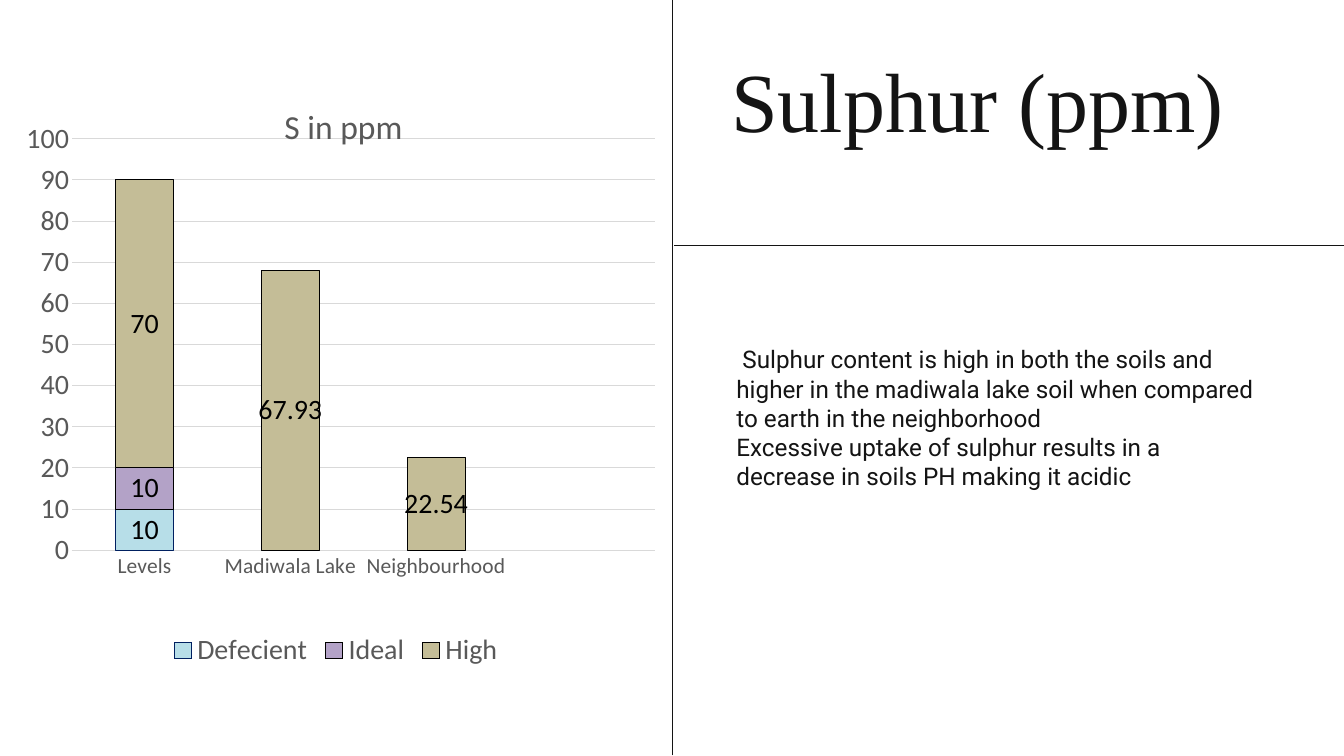
from pptx import Presentation
from pptx.chart.data import CategoryChartData
from pptx.dml.color import RGBColor
from pptx.enum import chart as ch
from pptx.enum import shapes, text
from pptx.oxml import parse_xml
from pptx.oxml.ns import nsdecls, qn
from pptx.util import Inches, Pt

INK = RGBColor(0x14, 0x14, 0x14)
BLACK = RGBColor(0, 0, 0)
GREY = RGBColor(0x59, 0x59, 0x59)
GRID = RGBColor(0xD9, 0xD9, 0xD9)
NAVY = RGBColor(0x00, 0x20, 0x60)
BLUE = RGBColor(0xB7, 0xDE, 0xE8)
PURPLE = RGBColor(0xB3, 0xA2, 0xC7)
TAN = RGBColor(0xC4, 0xBD, 0x97)

CATEGORIES = ["Levels", "Madiwala Lake", "Neighbourhood", ""]
SERIES = [
    ("Defecient", [10, None, None, None], BLUE, NAVY),
    ("Ideal", [10, None, None, None], PURPLE, BLACK),
    ("High", [70, 67.93, 22.54, None], TAN, BLACK),
]
FINDINGS = [
    " Sulphur content is high in both the soils and higher in the madiwala lake "
    "soil when compared to earth in the neighborhood",
    "Excessive uptake of sulphur results in a decrease in soils PH making it acidic",
]


def style_font(font, name, size, color):
    font.name, font.size = name, Pt(size)
    font.color.rgb = color


def style_line(line, color, width=0.75):
    line.color.rgb = color
    line.width = Pt(width)


def add_rule(page, x1, y1, x2, y2):
    rule = page.shapes.add_connector(
        shapes.MSO_CONNECTOR.STRAIGHT, Inches(x1), Inches(y1), Inches(x2), Inches(y2))
    style_line(rule.line, INK, 1.5)
    rule._element.spPr.append(parse_xml(f"<a:effectLst {nsdecls('a')}/>"))


def add_text(page, left, top, width, height, lines, font, size, inset=None, spacing=None):
    box = page.shapes.add_textbox(Inches(left), Inches(top), Inches(width), Inches(height))
    frame = box.text_frame
    frame.word_wrap = True
    frame.auto_size = text.MSO_AUTO_SIZE.SHAPE_TO_FIT_TEXT
    if inset is not None:
        frame.margin_left = frame.margin_right = Inches(inset)
        frame.margin_top = frame.margin_bottom = Inches(inset)
    frame.text = "\n".join(lines)
    for para in frame.paragraphs:
        style_font(para.font, font, size, INK)
        if spacing:
            para.line_spacing = Pt(spacing)


def set_layout(element, index, **fractions):
    """Place a chart part by fractions of the chart's size (x, y, w, h)."""
    for old in element.findall(qn("c:layout")):
        element.remove(old)
    target = '<c:layoutTarget val="inner"/>' if "w" in fractions else ""
    modes = "".join(f'<c:{key}Mode val="edge"/>' for key in fractions if key in "xy")
    values = "".join(f'<c:{key} val="{value}"/>' for key, value in fractions.items())
    element.insert(index, parse_xml(
        f"<c:layout {nsdecls('c')}><c:manualLayout>{target}{modes}{values}"
        "</c:manualLayout></c:layout>"))


def style_axes(chart):
    for axis, size in ((chart.category_axis, 23), (chart.value_axis, 30)):
        axis.major_tick_mark = axis.minor_tick_mark = ch.XL_TICK_MARK.NONE
        style_font(axis.tick_labels.font, "Calibri", size, GREY)
    style_line(chart.category_axis.format.line, GRID)
    values = chart.value_axis
    values.minimum_scale, values.maximum_scale, values.major_unit = 0, 100, 10
    values.format.line.fill.background()
    style_line(values.major_gridlines.format.line, GRID)


def add_sulphur_chart(page, left, top, width, height):
    data = CategoryChartData()
    data.categories = CATEGORIES
    for name, values, _, _ in SERIES:
        data.add_series(name, values)
    chart = page.shapes.add_chart(
        ch.XL_CHART_TYPE.COLUMN_STACKED, Inches(left), Inches(top),
        Inches(width), Inches(height), data).chart
    style_font(chart.font, "Calibri", 30, BLACK)

    chart.has_title = True
    title = chart.chart_title
    title.text_frame.text = "S in ppm"
    title.include_in_layout = False
    style_font(title.text_frame.paragraphs[0].font, "Calibri", 36, GREY)
    title.text_frame.paragraphs[0].font.bold = False
    set_layout(title._element, 1, x=0.41, y=0.045)

    chart.has_legend = True
    chart.legend.position = ch.XL_LEGEND_POSITION.BOTTOM
    chart.legend.include_in_layout = False
    style_font(chart.legend.font, "Calibri", 30, GREY)
    style_axes(chart)

    plot = chart.plots[0]
    plot.gap_width, plot.overlap, plot.vary_by_categories = 150, 100, False
    for series, (_, _, fill, outline) in zip(plot.series, SERIES):
        series.format.fill.solid()
        series.format.fill.fore_color.rgb = fill
        style_line(series.format.line, outline)
        labels = series.data_labels
        labels.show_value = True
        labels.position = ch.XL_LABEL_POSITION.CENTER
        style_font(labels.font, "Calibri", 30, BLACK)
    plot_area = chart._chartSpace.chart.plotArea
    set_layout(plot_area, 0, x=0.086, y=0.114, w=0.914, h=0.682)


def main():
    deck = Presentation()
    deck.slide_width, deck.slide_height = Inches(20), Inches(11.25)
    page = deck.slides.add_slide(deck.slide_layouts[6])
    add_rule(page, 10.01, 11.24, 10.01, -0.01)
    add_rule(page, 10.03, 3.65, 20.17, 3.65)
    add_text(page, 10.88, 0.72, 8.58, 1.51, ["Sulphur (ppm)"],
             "Times New Roman", 90, inset=0, spacing=108)
    add_sulphur_chart(page, 0.25, 1.04, 9.5, 8.98)
    add_text(page, 10.86, 5.08, 8.05, 2.29, FINDINGS, "Roboto", 26)
    deck.save("out.pptx")


if __name__ == "__main__":
    main()
